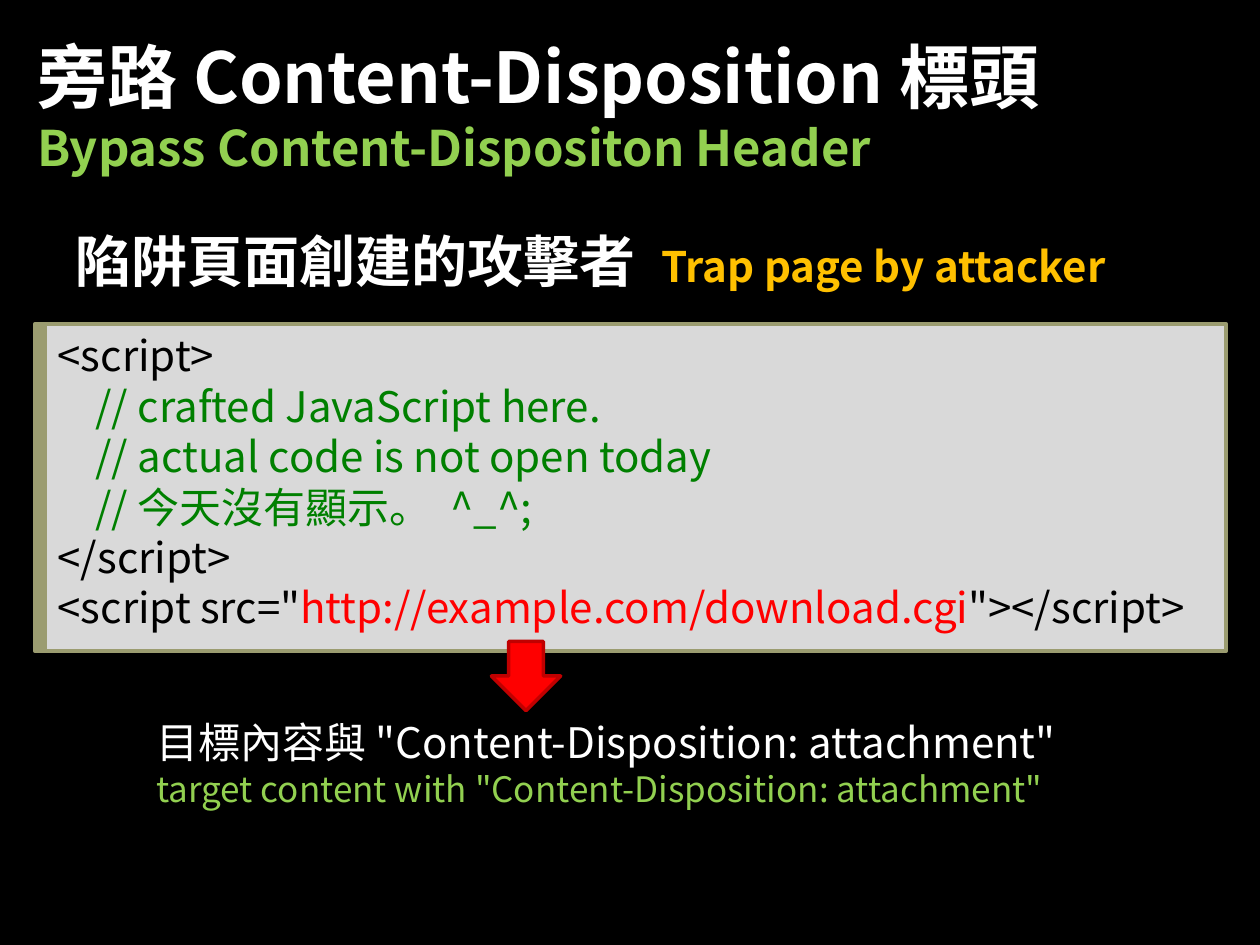
from pptx import Presentation
from pptx.dml.color import RGBColor
from pptx.enum.shapes import MSO_SHAPE
from pptx.enum.text import MSO_ANCHOR, PP_ALIGN
from pptx.oxml.ns import qn
from pptx.util import Inches, Pt

FONT = "Noto Sans CJK JP"
BLACK = RGBColor(0x00, 0x00, 0x00)
WHITE = RGBColor(0xFF, 0xFF, 0xFF)
LIME = RGBColor(0x92, 0xD0, 0x50)
AMBER = RGBColor(0xFF, 0xC0, 0x00)
CODE_FILL = RGBColor(0xD9, 0xD9, 0xD9)
OLIVE = RGBColor(0x9B, 0x9C, 0x70)
COMMENT = RGBColor(0x00, 0x80, 0x00)
URL_RED = RGBColor(0xFF, 0x00, 0x00)
ARROW_RED = RGBColor(0xFE, 0x00, 0x00)
DARK_RED = RGBColor(0xC0, 0x00, 0x00)


def add_run(paragraph, text, size=24, color=WHITE, bold=False):
    run = paragraph.add_run()
    run.text = text
    run.font.size = Pt(size)
    run.font.bold = bold
    run.font.color.rgb = color
    run.font.name = FONT
    east_asian = run.font._element.makeelement(qn("a:ea"), {"typeface": FONT})
    run.font._element.find(qn("a:latin")).addnext(east_asian)


def write_lines(frame, lines, anchor=MSO_ANCHOR.TOP, space_before=0, indents=()):
    """Fill a frame; each line is a list of (text, format) runs."""
    frame.word_wrap = True
    frame.vertical_anchor = anchor
    for number, runs in enumerate(lines):
        paragraph = frame.paragraphs[0] if number == 0 else frame.add_paragraph()
        paragraph.alignment = PP_ALIGN.LEFT
        paragraph.space_before = Pt(space_before)
        if number in indents:
            paragraph._p.get_or_add_pPr().set("marL", str(Inches(0.3)))
        for text, style in runs:
            add_run(paragraph, text, **style)


def add_text(slide, box, lines, **layout):
    write_lines(slide.shapes.add_textbox(*box).text_frame, lines, **layout)


def add_block(slide, kind, box, fill, line, width):
    block = slide.shapes.add_shape(kind, *box)
    block.shadow.inherit = False
    block.fill.solid()
    block.fill.fore_color.rgb = fill
    block.line.color.rgb = line
    block.line.width = Pt(width)
    return block


def add_title(slide, box):
    add_text(slide, box, [
        [("旁路 Content-Disposition 標頭", dict(size=40, bold=True))],
        [("Bypass Content-Dispositon Header", dict(size=28, bold=True, color=LIME))],
    ], anchor=MSO_ANCHOR.MIDDLE)


def add_heading(slide, box):
    add_text(slide, box, [[
        ("陷阱頁面創建的攻擊者  ", dict(size=32, bold=True)),
        ("Trap page by attacker", dict(bold=True, color=AMBER)),
    ]], space_before=6.4)


def add_code_panel(slide, left, top, width, height):
    bar_width = Inches(0.08)
    panel = add_block(slide, MSO_SHAPE.RECTANGLE,
                      (left + bar_width, top, width - bar_width, height),
                      CODE_FILL, OLIVE, 2.25)
    code, comment = dict(color=BLACK), dict(color=COMMENT)
    write_lines(panel.text_frame, [
        [("<script>", code)],
        [("// crafted JavaScript here.", comment)],
        [("// actual code is not open today", comment)],
        [("// 今天沒有顯示。  ^_^;", comment)],
        [("</script>", code)],
        [('<script src="', code),
         ("http://example.com/download.cgi", dict(color=URL_RED)),
         ('"></script>', code)],
    ], indents=(1, 2, 3))
    add_block(slide, MSO_SHAPE.RECTANGLE, (left, top, bar_width, height),
              OLIVE, OLIVE, 2.25)


def add_target(slide, arrow_box, text_box):
    add_block(slide, MSO_SHAPE.DOWN_ARROW, arrow_box, ARROW_RED, DARK_RED, 2)
    add_text(slide, text_box, [
        [('目標內容與 "Content-Disposition: attachment"', {})],
        [('target content with "Content-Disposition: attachment"',
          dict(size=20, color=LIME))],
    ])


def inches(*lengths):
    return [Inches(length) for length in lengths]


def main():
    deck = Presentation()
    deck.slide_width, deck.slide_height = inches(10, 7.5)
    slide = deck.slides.add_slide(deck.slide_layouts[6])
    slide.background.fill.solid()
    slide.background.fill.fore_color.rgb = BLACK

    add_title(slide, inches(0.2, 0.21, 9.8, 1.25))
    add_heading(slide, inches(0.5, 1.75, 9, 4.95))
    add_code_panel(slide, *inches(0.28, 2.57, 9.45, 2.6))
    add_target(slide, inches(3.9, 5.09, 0.55, 0.55), inches(1.14, 5.64, 8.35, 0.84))
    deck.save("out.pptx")


if __name__ == "__main__":
    main()
